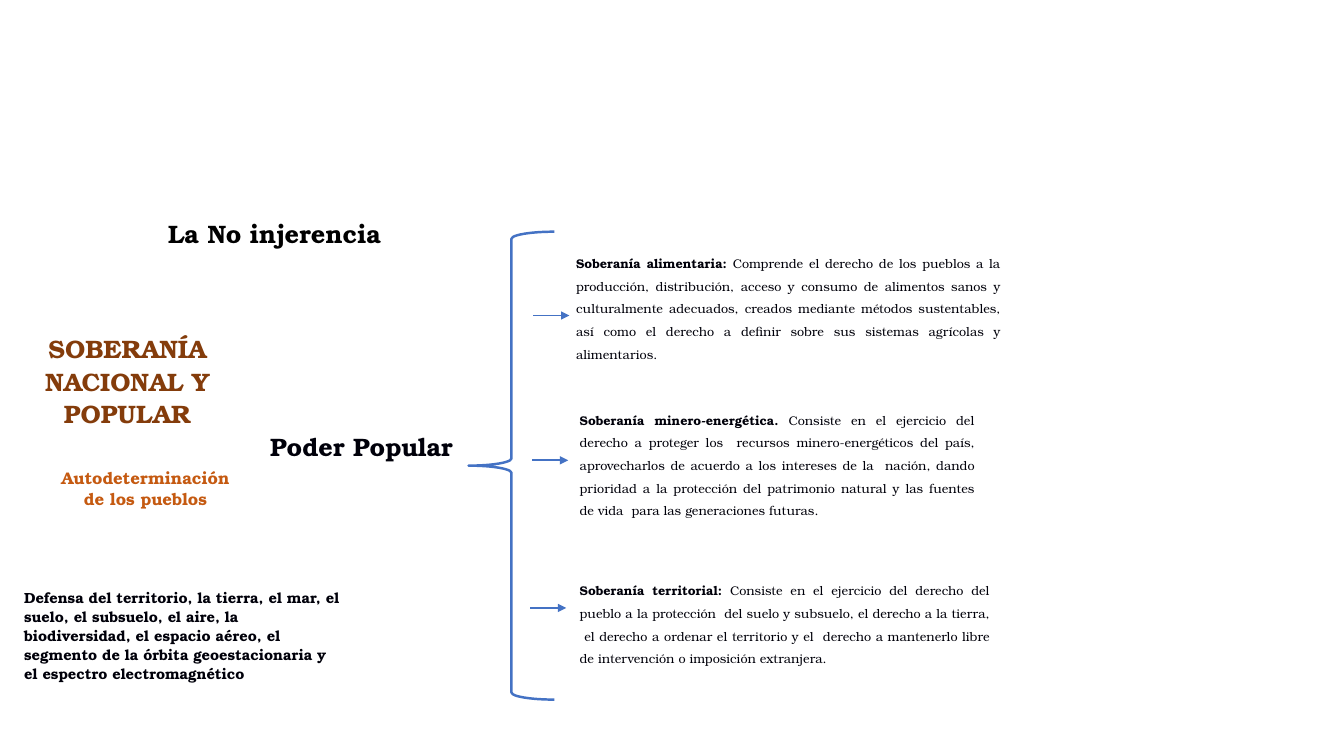
from pptx import Presentation
from pptx.dml.color import RGBColor
from pptx.enum.shapes import MSO_CONNECTOR as Link, MSO_SHAPE as Preset
from pptx.enum.text import MSO_ANCHOR as Anchor, PP_ALIGN as Align
from pptx.oxml.ns import qn
from pptx.util import Cm, Pt
from lxml.etree import SubElement

COLORS = {
    "brown": "843C0B",
    "orange": "C55A11",
    "black": "000000",
    "ink": "00000A",
    "blue": "4472C4",
    "white": "FFFFFF",
}


class SlideBuilder:
    font_name = "TeX Gyre Bonum"

    def __init__(self, page):
        self.page = page

    def color(self, name):
        return RGBColor.from_string(COLORS[name])

    def set_font(self, font, size, color):
        font.name, font.size = self.font_name, Pt(size)
        font.color.rgb = self.color(color)

    def text_box(self, left, top, width, height):
        box = self.page.shapes.add_textbox(Cm(left), Cm(top), Cm(width), Cm(height))
        box.text_frame.word_wrap = True
        return box.text_frame

    def heading(self, text, place, size, color, align=Align.CENTER):
        frame = self.text_box(*place)
        frame.vertical_anchor = Anchor.MIDDLE
        para = frame.paragraphs[0]
        para.text = text
        para.alignment = align
        para.line_spacing, para.space_after = 1.07, Pt(8)
        self.set_font(para.font, size, color)
        para.font.bold = True

    def definition(self, term, meaning, place):
        para = self.text_box(*place).paragraphs[0]
        para.alignment = Align.JUSTIFY
        para.line_spacing = Pt(16.2)
        self.set_font(para.font, 9, "ink")
        for text, bold in ((term + " ", True), (meaning, False)):
            span = para.add_run()
            span.text, span.font.bold = text, bold

    def brace(self, left, top, width, height):
        brace = self.page.shapes.add_shape(
            Preset.LEFT_BRACE, Cm(left), Cm(top), Cm(width), Cm(height))
        brace.shadow.inherit = False
        brace.fill.solid()
        brace.fill.fore_color.rgb = self.color("white")
        brace.line.color.rgb = self.color("blue")
        brace.line.width = Pt(1.75)

    def arrow(self, left, top, length):
        arrow = self.page.shapes.add_connector(
            Link.STRAIGHT, Cm(left), Cm(top), Cm(left + length), Cm(top))
        arrow.line.color.rgb = self.color("blue")
        arrow.line.width = Pt(1.25)
        SubElement(arrow.line._get_or_add_ln(), qn("a:tailEnd"), type="triangle")
        SubElement(arrow._element.spPr, qn("a:effectLst"))


def main():
    deck = Presentation()
    deck.slide_width, deck.slide_height = Cm(33.87), Cm(19.05)
    builder = SlideBuilder(deck.slides.add_slide(deck.slide_layouts[6]))

    # Topic and principles
    builder.heading("SOBERANÍA NACIONAL Y POPULAR", (0.48, 7.95, 5.46, 3.25), 18, "brown")
    builder.heading("La No injerencia ", (3.45, 4.75, 7.16, 2.21), 18, "black")
    builder.heading("Poder Popular ", (6.17, 10.54, 6.1, 1.37), 18, "ink")
    builder.heading("Autodeterminación de los pueblos", (1.17, 11.6, 5, 1.37), 12, "orange")
    builder.heading(
        "Defensa del territorio, la tierra, el mar, el suelo, el subsuelo, el aire, "
        "la biodiversidad, el espacio aéreo, el segmento de la órbita geoestacionaria "
        "y el espectro electromagnético",
        (0.36, 14.38, 8.48, 3.25), 10.5, "ink", Align.LEFT)

    # Kinds of sovereignty, with no-break spaces that keep short words together
    builder.definition(
        "Soberanía alimentaria:",
        "Comprende el derecho de los pueblos a la producción, distribución, acceso y "
        "consumo de alimentos sanos y culturalmente adecuados, creados mediante métodos "
        "sustentables, así como el derecho a definir sobre sus sistemas agrícolas y "
        "alimentarios.",
        (14.27, 6.13, 11.18, 3.05))
    builder.definition(
        "Soberanía minero-energética.",
        "Consiste en el ejercicio del derecho a proteger los  recursos minero-energéticos "
        "del país, aprovecharlos de acuerdo a los intereses de la  nación, dando prioridad "
        "a la protección del patrimonio natural y las fuentes de vida  para las "
        "generaciones futuras.",
        (14.36, 10.08, 10.44, 3.05))
    builder.definition(
        "Soberanía territorial:",
        "Consiste en el ejercicio del derecho del pueblo a la protección  del suelo y "
        "subsuelo, el derecho a la tierra,  el derecho a ordenar el territorio y el  "
        "derecho a mantenerlo libre de intervención o imposición extranjera.",
        (14.36, 14.38, 10.82, 2.46))

    # Brace with an arrow to each definition
    builder.brace(11.81, 5.84, 2.16, 11.79)
    for left, top in ((13.44, 7.95), (13.41, 11.6), (13.36, 15.32)):
        builder.arrow(left, top, 0.91)

    deck.save("out.pptx")


if __name__ == "__main__":
    main()
